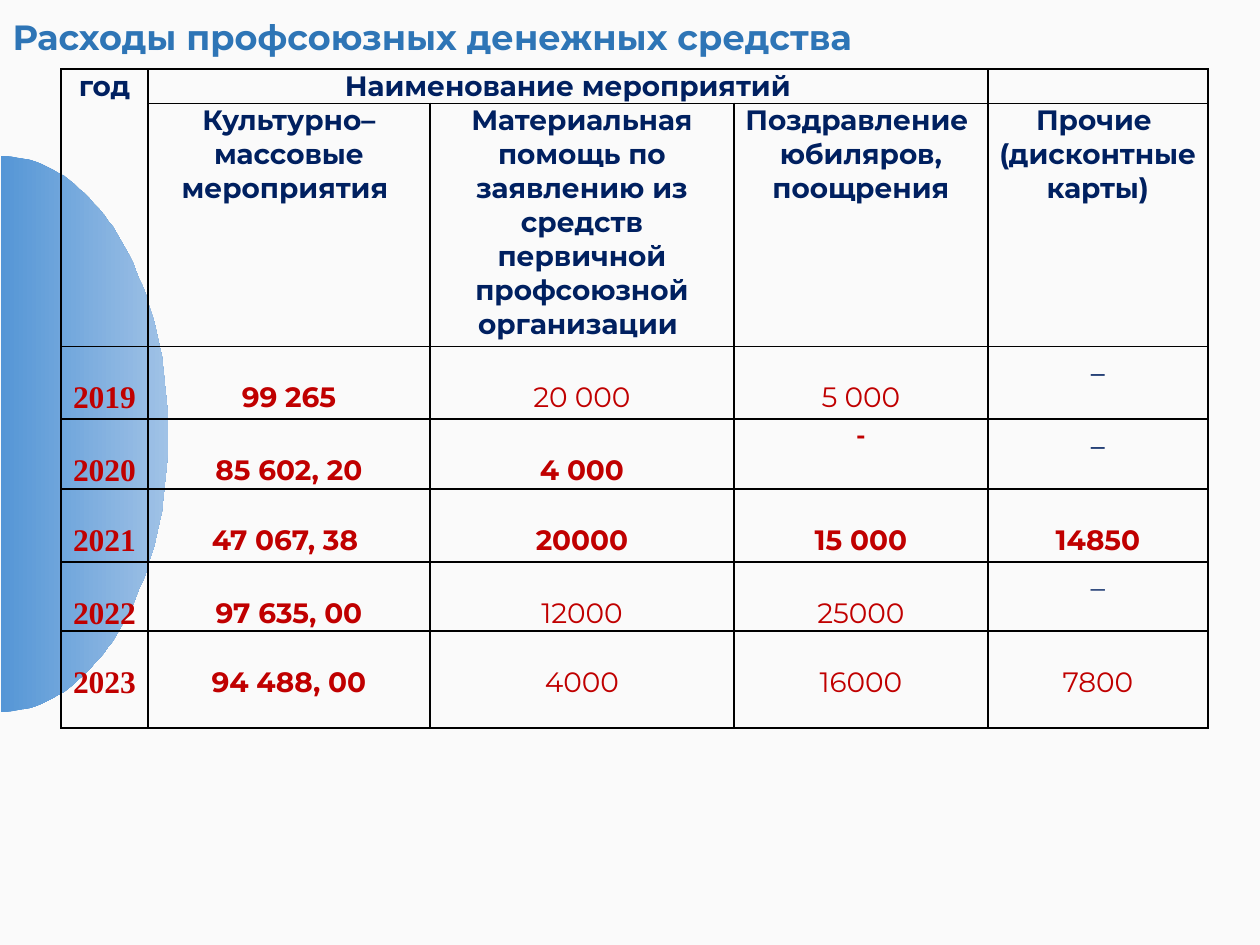
"""Build the slide on trade union spending by year."""
from math import cos, pi, sin

from lxml import etree
from pptx import Presentation
from pptx.dml.color import RGBColor
from pptx.enum.text import MSO_ANCHOR, PP_ALIGN
from pptx.oxml.ns import qn

LEFT, CENTER = PP_ALIGN.LEFT, PP_ALIGN.CENTER
MIDDLE = MSO_ANCHOR.MIDDLE
PX = 914400 / 126
THEME = {
    "paper": "FAFAFA", "title": "2E75B6", "head": "002060", "value": "C00000",
    "arc_from": "5596D6", "arc_to": "A0C2E6", "line": "000000",
    "main": "Montserrat", "serif": "Times New Roman", "sans": "Calibri",
    "title_size": 20, "size": 16, "year_size": 18,
}
SANS, SERIF = THEME["sans"], THEME["serif"]


def px(n):
    return round(n * PX)


def write(tf, text, font=THEME["main"], size=THEME["size"], color=THEME["head"],
          bold=True, align=CENTER, spacing=None):
    tf.word_wrap = True
    for i, line in enumerate(text.split("\n")):
        p = tf.paragraphs[0] if i == 0 else tf.add_paragraph()
        p.alignment = align
        if spacing:
            p.line_spacing = spacing
        if not line:
            p._p.get_or_add_endParaRPr().set("sz", str(size * 100))
            continue
        r = p.add_run()
        r.text = line
        r.font.name = font
        r.font.size = size * 12700
        r.font.bold = bold
        r.font.color.rgb = RGBColor.from_string(color)


prs = Presentation()
prs.slide_width, prs.slide_height = px(1260), px(945)
s = prs.slides.add_slide(prs.slide_layouts[5])
s.background.fill.solid()
s.background.fill.fore_color.rgb = RGBColor.from_string(THEME["paper"])

ARC_X, ARC_Y, ARC_W, ARC_H, STEPS = 1, 434, 167, 278, 90
angles = [pi * i / STEPS - pi / 2 for i in range(STEPS + 1)]
points = [(ARC_X + ARC_W * cos(a), ARC_Y + ARC_H * sin(a)) for a in angles]
builder = s.shapes.build_freeform(*points[0], scale=PX)
builder.add_line_segments(points[1:], close=True)
arc = builder.convert_to_shape()
arc.shadow.inherit = False
arc.line.fill.background()
arc.fill.gradient()
arc.fill.gradient_angle = 0
for stop, color in zip(arc.fill.gradient_stops, ("arc_from", "arc_to")):
    stop.color.rgb = RGBColor.from_string(THEME[color])

title = s.shapes.title
title.left, title.top, title.width, title.height = 0, 0, px(1210), px(79)
title.text_frame.vertical_anchor = MIDDLE
write(title.text_frame, "Расходы профсоюзных денежных средства",
      size=THEME["title_size"], color=THEME["title"], align=LEFT, spacing=0.9)

COLS = [87, 282, 304, 254, 220]
ROWS = [34, 243, 73, 70, 73, 69, 97]
HEADS = [
    ["год", "Наименование мероприятий", "", "", ""],
    ["", "Культурно–массовые мероприятия ",
     "Материальная помощь по заявлению из средств первичной профсоюзной организации ",
     "Поздравление \nюбиляров, поощрения", "Прочие \n(дисконтные карты)"],
]
YEARS = [
    (["2019", "99 265", "20 000", "5 000", "_"], 2, SANS),
    (["2020", "85 602, 20", "4 000", "-", "_"], 4, SANS),
    (["2021", "47 067, 38 ", "20000", "15 000", "14850"], 5, SANS),
    (["2022", "97 635, 00", "12000", "25000", "_"], 2, SERIF),
    (["2023", "94 488, 00", "4000", "16000", "7800"], 2, SANS),
]
VALUE_TOP = 34

frame = s.shapes.add_table(len(ROWS), len(COLS), px(61), px(69),
                           px(sum(COLS)), px(sum(ROWS)))
table = frame.table
table.first_row = table.horz_banding = False
for col, width in zip(table.columns, COLS):
    col.width = px(width)
for row, height in zip(table.rows, ROWS):
    row.height = px(height)

for row in table.rows:
    for cell in row.cells:
        cell.margin_left = cell.margin_right = px(5)
        cell.margin_top = cell.margin_bottom = 0
        tcPr = cell._tc.get_or_add_tcPr()
        for side in ("a:lnL", "a:lnR", "a:lnT", "a:lnB"):
            ln = etree.SubElement(tcPr, qn(side), w="12700")
            fill = etree.SubElement(ln, qn("a:solidFill"))
            etree.SubElement(fill, qn("a:srgbClr"), val=THEME["line"])
        cell.fill.background()

for r, texts in enumerate(HEADS):
    for c, text in enumerate(texts):
        write(table.cell(r, c).text_frame, text)

for r, (texts, bold_count, dash_font) in enumerate(YEARS, len(HEADS)):
    for c, text in enumerate(texts):
        cell = table.cell(r, c)
        style = {"color": THEME["value"], "bold": c < bold_count}
        if c == 0:
            style.update(font=SERIF, size=THEME["year_size"])
        if text == "_":
            style.update(font=dash_font, color=THEME["head"])
        elif text == "-":
            style.update(font=SANS)
        else:
            cell.margin_top = px(VALUE_TOP)
        write(cell.text_frame, text, **style)

table.cell(0, 0).merge(table.cell(1, 0))
table.cell(0, 1).merge(table.cell(0, 3))

prs.save("out.pptx")
